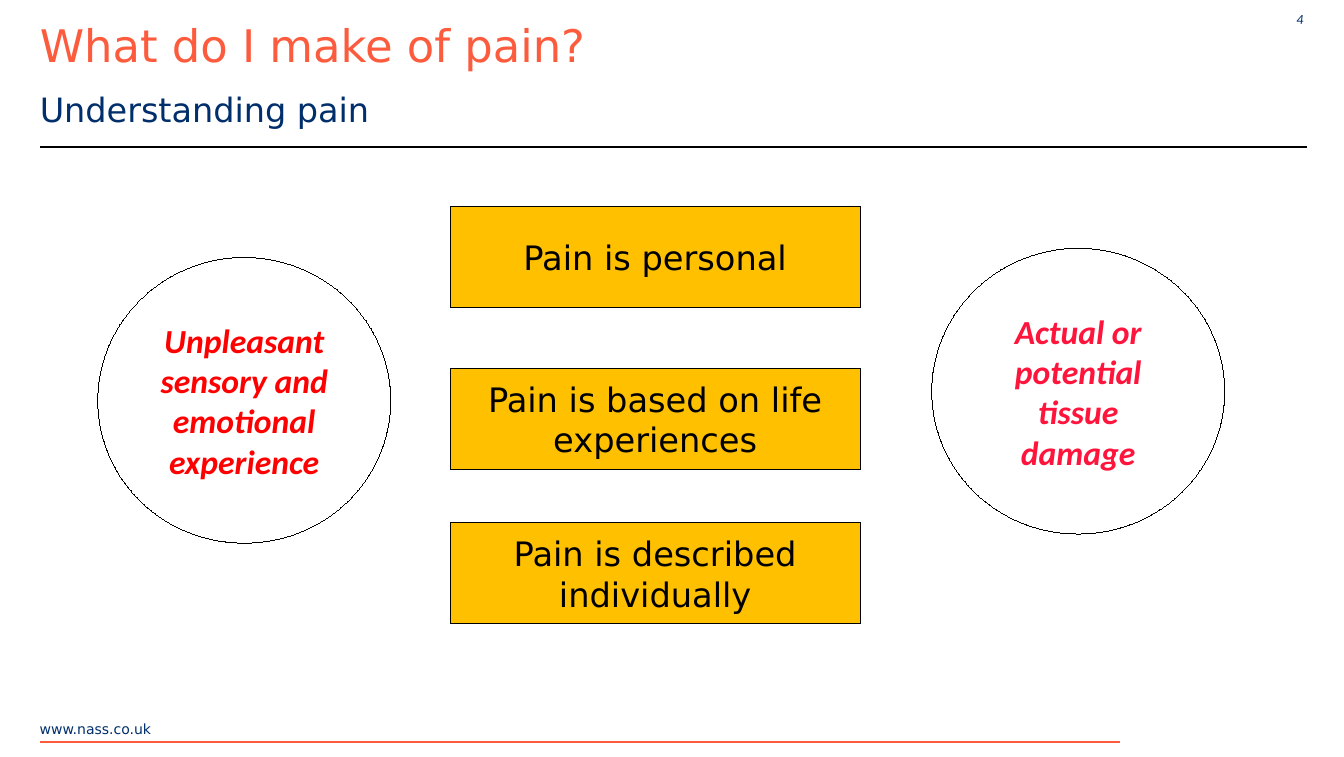
from lxml.etree import SubElement
from pptx import Presentation
from pptx.dml.color import RGBColor
from pptx.enum.shapes import MSO_CONNECTOR, MSO_SHAPE
from pptx.enum.text import MSO_ANCHOR, MSO_AUTO_SIZE, PP_ALIGN
from pptx.oxml.ns import qn
from pptx.util import Cm, Pt

CORAL = RGBColor(0xFC, 0x5C, 0x3D)
NAVY = RGBColor(0x00, 0x2F, 0x6C)
BLACK = RGBColor(0x00, 0x00, 0x00)
RED = RGBColor(0xFF, 0x00, 0x00)
CRIMSON = RGBColor(0xFF, 0x14, 0x3C)
AMBER = RGBColor(0xFF, 0xC0, 0x00)


class PainSlide:
    heading_font = "DejaVu Sans"
    accent_font = "Calibri"
    left_margin = 1

    def __init__(self, presentation):
        self.slide = presentation.slides.add_slide(presentation.slide_layouts[1])
        self.shapes = self.slide.shapes

    def set_text(self, shape, text, size, color, font=None, align=PP_ALIGN.LEFT,
                 anchor=MSO_ANCHOR.TOP, bold=False, italic=False):
        frame = shape.text_frame
        frame.text = text
        frame.word_wrap = True
        frame.auto_size = MSO_AUTO_SIZE.NONE
        frame.vertical_anchor = anchor
        paragraph = frame.paragraphs[0]
        paragraph.alignment = align
        paragraph.space_before = Pt(0)
        if shape.is_placeholder and shape.placeholder_format.idx == 1:
            properties = paragraph._p.get_or_add_pPr()
            properties.set("marL", "0")
            properties.set("indent", "0")
            SubElement(properties, qn("a:buNone"))
        paragraph.font.name = font or self.heading_font
        paragraph.font.size = Pt(size)
        paragraph.font.bold = bold
        paragraph.font.italic = italic
        paragraph.font.color.rgb = color
        return paragraph

    def placeholder(self, index, text, top, height, size, color):
        shape = self.slide.placeholders[index]
        shape.left, shape.top = Cm(self.left_margin), Cm(top)
        shape.width, shape.height = Cm(31.8), Cm(height)
        shape.text_frame.margin_left = 0
        return self.set_text(shape, text, size, color)

    def title(self, text):
        paragraph = self.placeholder(0, text, 0.48, 1.4, 32, CORAL)
        paragraph.line_spacing = 0.9

    def subtitle(self, text):
        paragraph = self.placeholder(1, text, 2.11, 1.14, 23.9, NAVY)
        paragraph.space_after = Pt(16)

    def label(self, text, left, top, width, height, **style):
        box = self.shapes.add_textbox(Cm(left), Cm(top), Cm(width), Cm(height))
        frame = box.text_frame
        frame.margin_left = frame.margin_right = 0
        frame.margin_top = frame.margin_bottom = 0
        self.set_text(box, text, 10, NAVY, **style)

    def rule(self, top, right, color):
        line = self.shapes.add_connector(
            MSO_CONNECTOR.STRAIGHT, Cm(self.left_margin), Cm(top), Cm(right), Cm(top))
        line.line.color.rgb = color
        line.line.width = Pt(1.5)
        SubElement(line._element.spPr, qn("a:effectLst"))

    def outlined(self, kind, left, top, width, height):
        shape = self.shapes.add_shape(kind, Cm(left), Cm(top), Cm(width), Cm(height))
        shape.shadow.inherit = False
        shape.line.color.rgb = BLACK
        shape.line.width = Pt(0.01)
        return shape

    def circle(self, text, left, top, color):
        shape = self.outlined(MSO_SHAPE.OVAL, left, top, 7.37, 7.19)
        shape.fill.background()
        self.set_text(shape, text, 24, color, self.accent_font, PP_ALIGN.CENTER,
                      MSO_ANCHOR.MIDDLE, bold=True, italic=True)

    def statement(self, text, top):
        shape = self.outlined(MSO_SHAPE.RECTANGLE, 11.33, top, 10.31, 2.54)
        shape.fill.solid()
        shape.fill.fore_color.rgb = AMBER
        self.set_text(shape, text, 24, BLACK, align=PP_ALIGN.CENTER,
                      anchor=MSO_ANCHOR.MIDDLE)


def main():
    presentation = Presentation()
    presentation.slide_width = Cm(33.81)
    presentation.slide_height = Cm(19.05)

    page = PainSlide(presentation)
    page.title("What do I make of pain?")
    page.subtitle("Understanding pain")
    page.rule(3.71, 32.87, BLACK)
    page.rule(18.67, 28.17, CORAL)
    page.label("www.nass.co.uk", 1, 18.14, 4.78, 0.41)
    page.label("4", 31.83, 0, 0.96, 0.96, font=page.accent_font,
               align=PP_ALIGN.RIGHT, anchor=MSO_ANCHOR.MIDDLE, italic=True)

    page.circle("Unpleasant sensory and emotional experience", 2.46, 6.48, RED)
    page.circle("Actual or potential tissue damage", 23.44, 6.25, CRIMSON)
    for text, top in (
        ("Pain is personal", 5.21),
        ("Pain is based on life experiences", 9.27),
        ("Pain is described individually", 13.16),
    ):
        page.statement(text, top)

    presentation.save("out.pptx")


if __name__ == "__main__":
    main()
